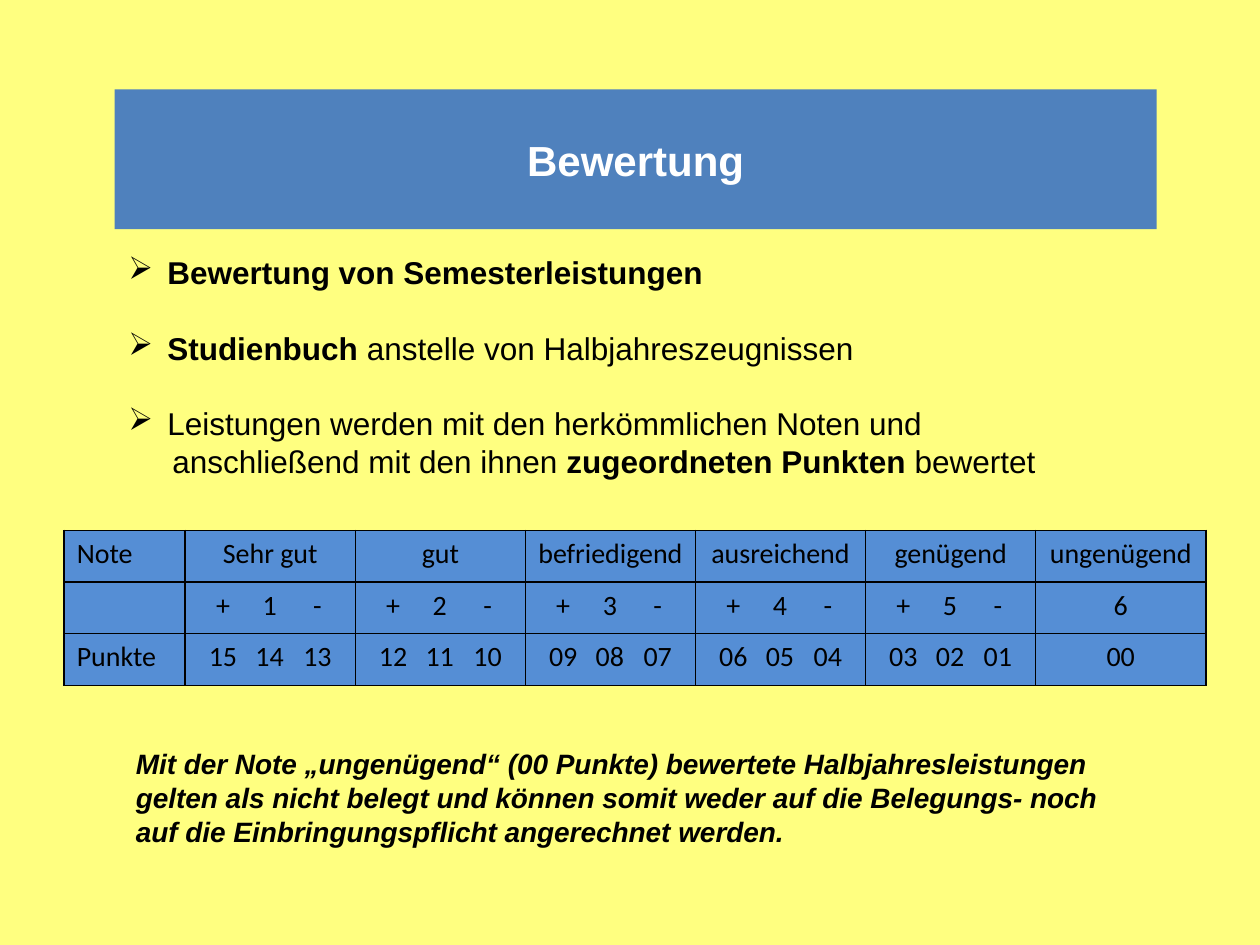
import pptx
import pptx.util
import pptx.dml.color
import pptx.enum.shapes
import pptx.enum.text
import pptx.oxml
import pptx.oxml.ns

Inches, Pt = pptx.util.Inches, pptx.util.Pt
ALIGN = pptx.enum.text.PP_ALIGN
COLORS = {"page": "FFFF80", "banner": "4F81BD", "cell": "558ED5",
          "text": "000000", "title": "FFFFFF"}

TITLE = "Bewertung"
# Each line: has a bullet, then (text, bold) spans
LINES = [
    (True, [("Bewertung von Semesterleistungen", True)]),
    (True, [("Studienbuch", True), (" anstelle von Halbjahreszeugnissen", False)]),
    (True, [("Leistungen werden mit den herkömmlichen Noten und", False)]),
    (False, [("anschließend mit den ihnen ", False),
             ("zugeordneten Punkten", True), (" bewertet", False)]),
]
NOTE = ("Mit der Note „ungenügend“ (00 Punkte) bewertete Halbjahresleistungen "
        "gelten als nicht belegt und können somit weder auf die Belegungs- noch "
        "auf die Einbringungspflicht angerechnet werden.")
# Tuples inside a cell are spread over three tab stops
GRADES = [
    ["Note", "Sehr gut", "gut", "befriedigend", "ausreichend", "genügend", "ungenügend"],
    ["", *[("+", str(grade), "-") for grade in range(1, 6)], "6"],
    ["Punkte", *[tuple(f"{top - step:02d}" for step in range(3))
                 for top in range(15, 0, -3)], "00"],
]
LABEL_WIDTH, GRADE_WIDTH, ROW_HEIGHT = 0.96, 1.35, 0.41
TAB_STOPS = [0.2, 0.57, 0.95]


def rgb(name):
    return pptx.dml.color.RGBColor.from_string(COLORS[name])


def style(span, size, color="text", font="Arial", bold=False, italic=False):
    span.font.size = Pt(size)
    span.font.name = font
    span.font.bold = bold
    span.font.italic = italic
    span.font.color.rgb = rgb(color)


def add_xml(parent, xml):
    declaration = pptx.oxml.ns.nsdecls("a")
    parent.append(pptx.oxml.parse_xml(xml.replace(" ", f" {declaration} ", 1)))


def add_text_box(page, left, top, width, height):
    frame = page.shapes.add_textbox(
        Inches(left), Inches(top), Inches(width), Inches(height)).text_frame
    frame.word_wrap = True
    return frame


def add_banner(page):
    banner = page.shapes.add_shape(
        pptx.enum.shapes.MSO_SHAPE.RECTANGLE,
        Inches(0.91), Inches(0.71), Inches(8.27), Inches(1.11))
    banner.shadow.inherit = False
    banner.fill.solid()
    banner.fill.fore_color.rgb = rgb("banner")
    banner.line.fill.background()
    frame = banner.text_frame
    frame.text = TITLE
    frame.vertical_anchor = pptx.enum.text.MSO_ANCHOR.MIDDLE
    frame.paragraphs[0].alignment = ALIGN.CENTER
    style(frame.paragraphs[0].runs[0], 24, "title", bold=True)


def add_lines(page):
    frame = add_text_box(page, 0.92, 1.96, 8.19, 1.92)
    for index, (bulleted, spans) in enumerate(LINES):
        para = frame.add_paragraph() if index else frame.paragraphs[0]
        if bulleted and index:
            para.space_before = Pt(21.6)
        properties = para._p.get_or_add_pPr()
        properties.set("marL", str(Inches(0.31 if bulleted else 0.35)))
        if bulleted:
            properties.set("indent", str(-Inches(0.31)))
            add_xml(properties, '<a:buChar char="➢"/>')
        for text, bold in spans:
            span = para.add_run()
            span.text = text
            style(span, 18, bold=bold)


def add_border(cell):
    for side in ("lnL", "lnR", "lnT", "lnB"):
        add_xml(cell._tc.get_or_add_tcPr(),
                f'<a:{side} w="{Pt(1)}"><a:solidFill><a:srgbClr val="{COLORS["text"]}"/>'
                f'</a:solidFill></a:{side}>')


def fill_cell(cell, content, is_label):
    para = cell.text_frame.paragraphs[0]
    if isinstance(content, tuple):
        para.text = "".join("\t" + part for part in content)
        stops = "".join(f'<a:tab pos="{Inches(stop)}" algn="ctr"/>' for stop in TAB_STOPS)
        add_xml(para._p.get_or_add_pPr(), f'<a:tabLst >{stops}</a:tabLst>')
    else:
        para.text = content
        para.alignment = ALIGN.LEFT if is_label else ALIGN.CENTER
    para.font.size = Pt(16)
    for span in para.runs:
        style(span, 16, font="Calibri")
    # Borders come before the fill in the cell properties
    add_border(cell)
    cell.fill.solid()
    cell.fill.fore_color.rgb = rgb("cell")


def add_grades(page):
    columns = len(GRADES[0])
    width = LABEL_WIDTH + (columns - 1) * GRADE_WIDTH
    table = page.shapes.add_table(
        len(GRADES), columns, Inches(0.51), Inches(4.21),
        Inches(width), Inches(ROW_HEIGHT * len(GRADES))).table
    table.first_row = table.horz_banding = False
    for index, column in enumerate(table.columns):
        column.width = Inches(GRADE_WIDTH if index else LABEL_WIDTH)
    for row_index, row in enumerate(GRADES):
        table.rows[row_index].height = Inches(ROW_HEIGHT)
        for index, content in enumerate(row):
            fill_cell(table.cell(row_index, index), content, index == 0)


def add_note(page):
    frame = add_text_box(page, 0.98, 5.88, 8.12, 0.94)
    frame.text = NOTE
    style(frame.paragraphs[0].runs[0], 16, bold=True, italic=True)


def main():
    deck = pptx.Presentation()
    deck.slide_width, deck.slide_height = Inches(10), Inches(7.5)
    page = deck.slides.add_slide(deck.slide_layouts[6])
    page.background.fill.solid()
    page.background.fill.fore_color.rgb = rgb("page")
    add_banner(page)
    add_lines(page)
    add_note(page)
    add_grades(page)
    deck.save("out.pptx")


if __name__ == "__main__":
    main()
